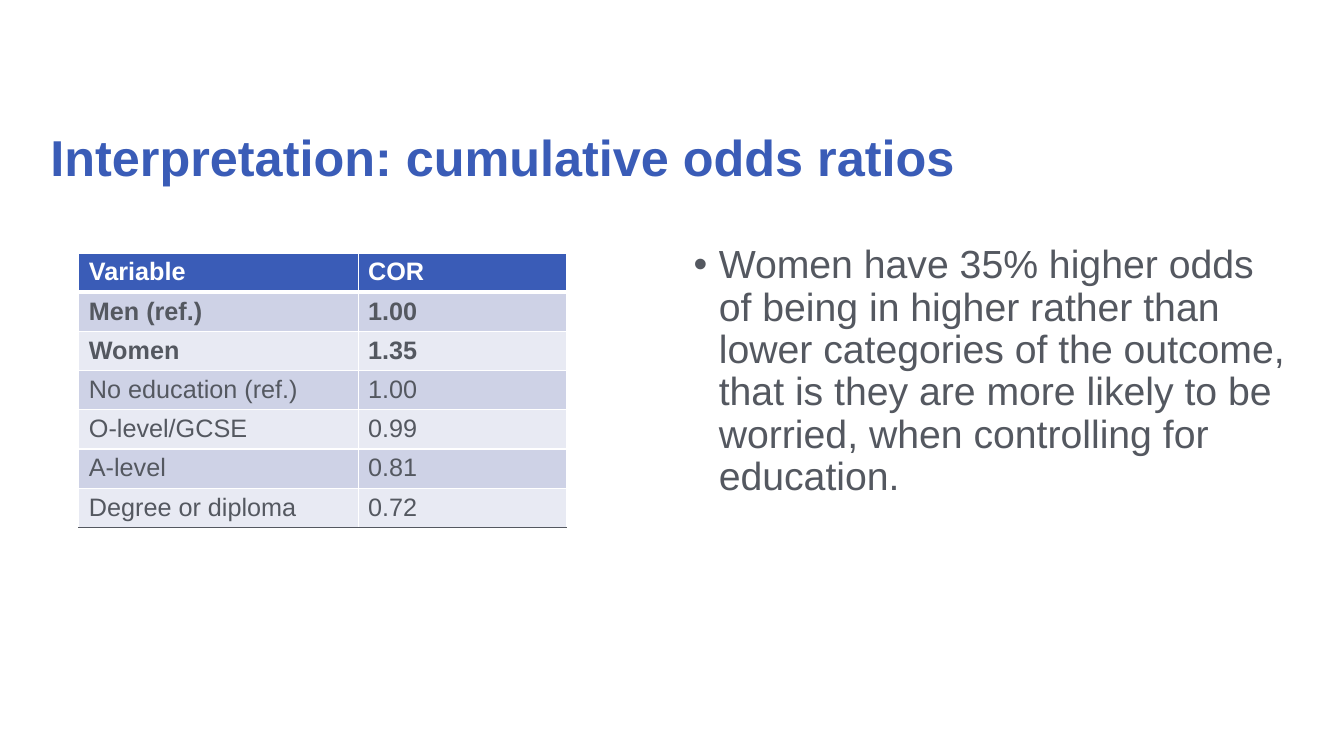
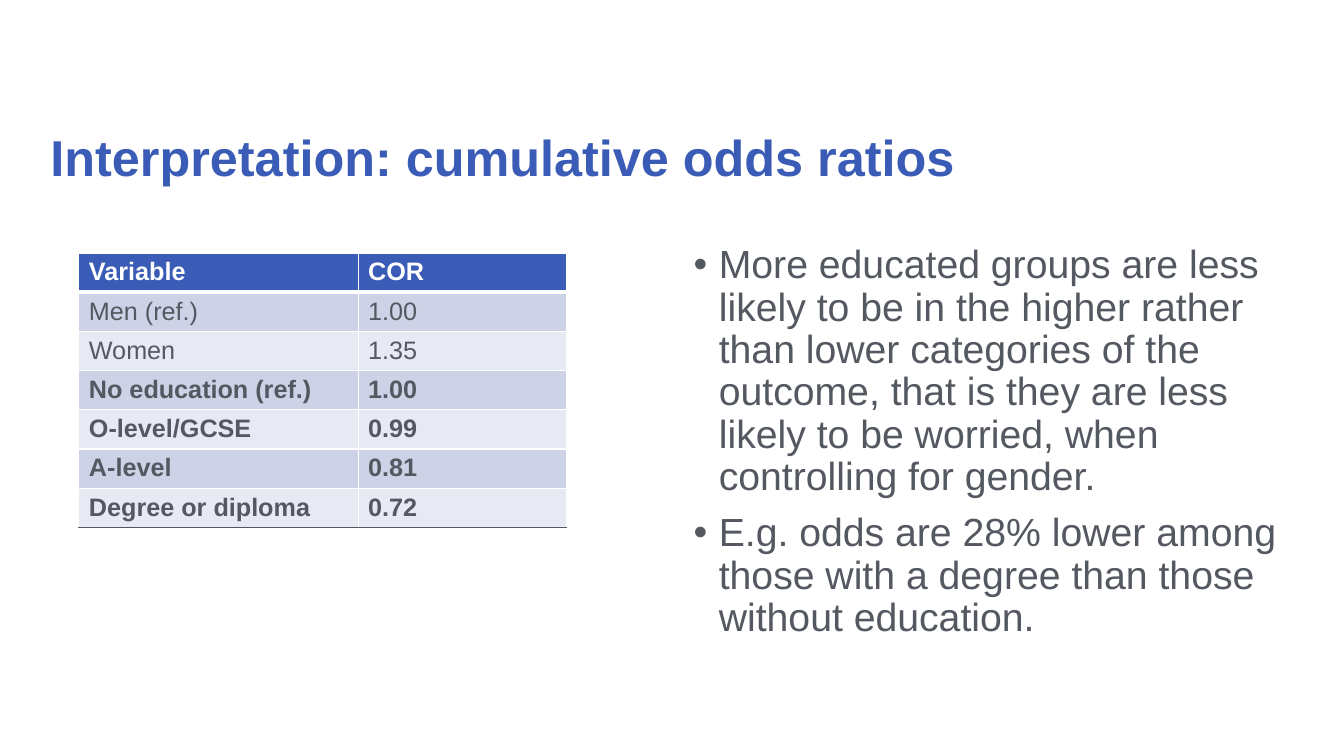
from dataclasses import dataclass

from lxml import etree
from pptx import Presentation
from pptx.dml.color import RGBColor
from pptx.enum.text import MSO_ANCHOR, MSO_AUTO_SIZE, PP_ALIGN
from pptx.oxml.ns import qn
from pptx.util import Inches, Pt

LEFT = PP_ALIGN.LEFT
TOP, MIDDLE = MSO_ANCHOR.TOP, MSO_ANCHOR.MIDDLE
FIXED = MSO_AUTO_SIZE.NONE

WIDE, HIGH = Inches(13.33), Inches(7.5)
GRID = 100
FONT = "Arial"
COLORS = {
    "blue": "3A5CB7",
    "ink": "545860",
    "white": "FFFFFF",
    "dark": "CED2E6",
    "light": "E8EAF3",
}


@dataclass(frozen=True)
class Box:
    col: float
    row: float
    cols: float
    rows: float


@dataclass(frozen=True)
class Page:
    bold: range
    points: tuple[str, ...]


TITLE = "Interpretation: cumulative odds ratios"
HEAD = Box(3, 14.13, 94.07, 14.13)
BODY = Box(50.86, 31.73, 46.21, 59.07)
SPANS = (20.78, 15.53)
STEP = 5.19
DATA = (
    ("Variable", "COR"),
    ("Men (ref.)", "1.00"),
    ("Women", "1.35"),
    ("No education (ref.)", "1.00"),
    ("O-level/GCSE", "0.99"),
    ("A-level", "0.81"),
    ("Degree or diploma", "0.72"),
)
TABLE = Box(5.87, 33.47, sum(SPANS), STEP * len(DATA))
PAGES = (
    Page(range(1, 3), (
        "Women have 35% higher odds of being in higher rather than lower "
        "categories of the outcome, that is they are more likely to be "
        "worried, when controlling for education.",
    )),
    Page(range(3, 7), (
        "More educated groups are less likely to be in the higher rather "
        "than lower categories of the outcome, that is they are less likely "
        "to be worried, when controlling for gender.",
        "E.g. odds are 28% lower among those with a degree than those "
        "without education.",
    )),
)


def across(cols: float) -> int:
    return round(WIDE * cols / GRID)


def down(rows: float) -> int:
    return round(HIGH * rows / GRID)


def place(box: Box) -> tuple[int, int, int, int]:
    return across(box.col), down(box.row), across(box.cols), down(box.rows)


def style(para, size: float, color: str, bold: bool = False) -> None:
    for run in para.runs:
        font = run.font
        font.name, font.size, font.bold = FONT, Pt(size), bold
        font.color.rgb = RGBColor.from_string(COLORS[color])


def fit(shape, box: Box, anchor):
    shape.left, shape.top, shape.width, shape.height = place(box)
    frame = shape.text_frame
    frame.auto_size, frame.word_wrap = FIXED, True
    frame.vertical_anchor = anchor
    return frame


def add_title(slide) -> None:
    frame = fit(slide.shapes.title, HEAD, MIDDLE)
    frame.text = TITLE
    para = frame.paragraphs[0]
    para.alignment, para.line_spacing = LEFT, 0.9
    style(para, 36, "blue", True)


def add_list(slide, points: tuple[str, ...]) -> None:
    frame = fit(slide.placeholders[1], BODY, TOP)
    frame.text = "\n".join(points)
    for i, para in enumerate(frame.paragraphs):
        props = para._p.get_or_add_pPr()
        props.set("marL", str(Inches(0.25)))
        props.set("indent", str(-Inches(0.25)))
        etree.SubElement(props, qn("a:buFont")).set("typeface", FONT)
        etree.SubElement(props, qn("a:buChar")).set("char", "•")
        para.alignment, para.line_spacing = LEFT, 0.9
        para.space_before = Pt(10 if i else 0)
        style(para, 28, "ink")


def edge(cell, top: float, base: str, low: float) -> None:
    props = cell._tc.get_or_add_tcPr()
    sides = (("L", "white", 1), ("R", "white", 1), ("T", "white", top), ("B", base, low))
    for i, (side, color, width) in enumerate(sides):
        line = etree.Element(qn(f"a:ln{side}"), w=str(Pt(width)))
        fill = etree.SubElement(line, qn("a:solidFill"))
        etree.SubElement(fill, qn("a:srgbClr")).set("val", COLORS[color])
        props.insert(i, line)


def add_table(slide, bold: range) -> None:
    table = slide.shapes.add_table(len(DATA), len(SPANS), *place(TABLE)).table
    for col, span in zip(table.columns, SPANS):
        col.width = across(span)
    last = len(DATA) - 1
    for i, (row, texts) in enumerate(zip(table.rows, DATA)):
        row.height = down(STEP)
        shade = "blue" if i == 0 else "dark" if i % 2 else "light"
        for cell, text in zip(row.cells, texts):
            cell.text = text
            style(cell.text_frame.paragraphs[0], 18,
                  "ink" if i else "white", i == 0 or i in bold)
            cell.fill.solid()
            cell.fill.fore_color.rgb = RGBColor.from_string(COLORS[shade])
            edge(cell, 3 if i == 1 else 1,
                 "ink" if i == last else "white", 1 if i else 3)


def main() -> None:
    deck = Presentation()
    deck.slide_width, deck.slide_height = WIDE, HIGH
    for page in PAGES:
        slide = deck.slides.add_slide(deck.slide_layouts[1])
        add_title(slide)
        add_list(slide, page.points)
        add_table(slide, page.bold)
    deck.save("out.pptx")


if __name__ == "__main__":
    main()
